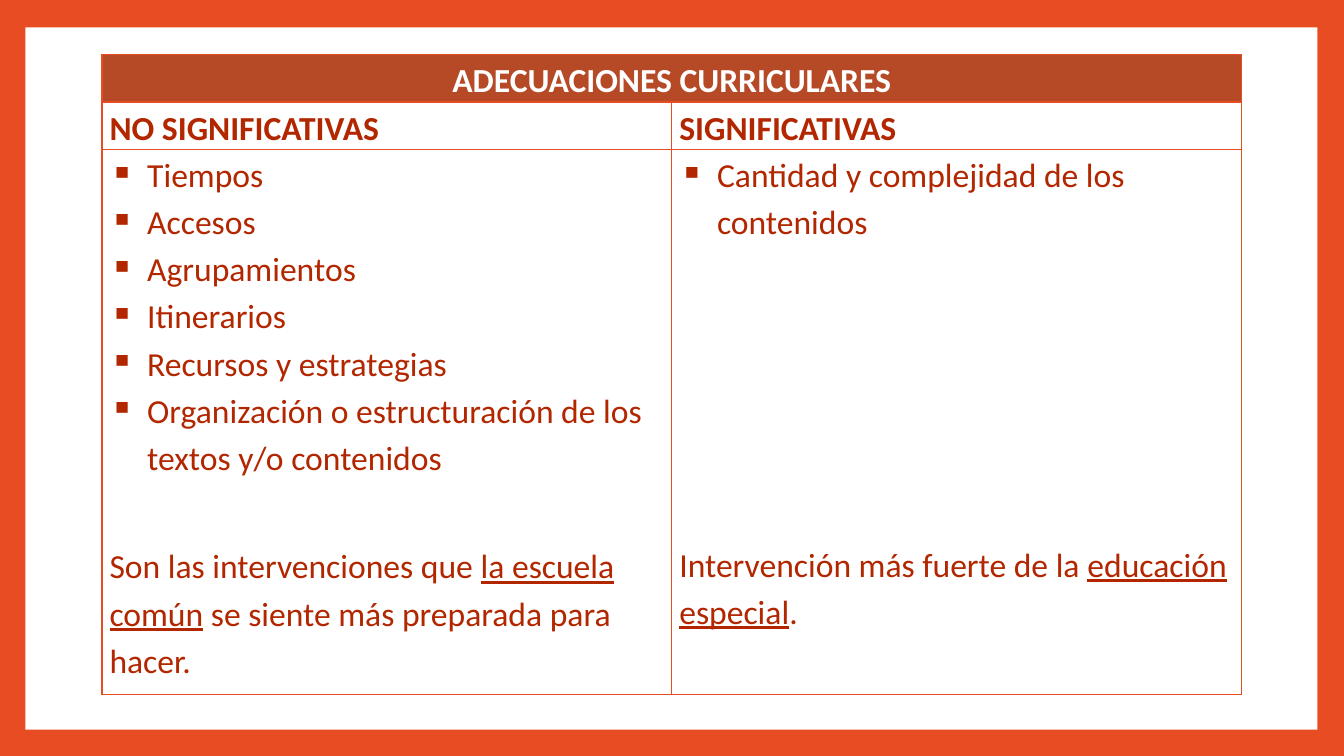
from lxml import etree
from pptx import Presentation
from pptx.dml.color import RGBColor
from pptx.enum.shapes import MSO_SHAPE
from pptx.enum.text import PP_ALIGN
from pptx.oxml.ns import qn
from pptx.util import Cm, Pt

RECTANGLE = MSO_SHAPE.RECTANGLE
CENTER, LEFT = PP_ALIGN.CENTER, PP_ALIGN.LEFT

# Content
TITLE = "ADECUACIONES CURRICULARES"
COLUMNS = [
    {
        "heading": "NO SIGNIFICATIVAS",
        "items": [
            "Tiempos",
            "Accesos",
            "Agrupamientos",
            "Itinerarios",
            "Recursos y estrategias",
            "Organización o estructuración de los textos y/o contenidos",
        ],
        "summary": ("Son las intervenciones que ", "la escuela común",
                    " se siente más preparada para hacer."),
        "summary_gap": 44,
    },
    {
        "heading": "SIGNIFICATIVAS",
        "items": ["Cantidad y complejidad de los contenidos"],
        "summary": ("Intervención más fuerte de la ", "educación especial", "."),
        "summary_gap": 211,
    },
]

# Style and layout
COLORS = {"orange": "E84C22", "header": "B64926", "text": "B22600", "white": "FFFFFF"}
FONT, FONT_SIZE = "Calibri", 24
ROW_HEIGHTS = [1.2, 1.2, 13.74]
COLUMN_WIDTH = 14.36
BULLET_INDENT = 0.95


def color(name):
    return RGBColor.from_string(COLORS[name])


def fill_solid(fill, name):
    fill.solid()
    fill.fore_color.rgb = color(name)


def write_paragraph(paragraph, parts, font_color="text", bold=False,
                    align=LEFT, bullet=False, space_before=0):
    """Write text parts; every second part is underlined."""
    paragraph.alignment = align
    paragraph.line_spacing = 1.15
    paragraph.space_before = Pt(space_before)
    paragraph.space_after = Pt(0)
    for index, text in enumerate(parts):
        run = paragraph.add_run()
        run.text = text
        font = run.font
        font.name, font.size, font.bold = FONT, Pt(FONT_SIZE), bold
        font.underline = index % 2 == 1
        font.color.rgb = color(font_color)
    if bullet:
        properties = paragraph._p.get_or_add_pPr()
        properties.set("marL", str(Cm(BULLET_INDENT)))
        properties.set("indent", str(-Cm(BULLET_INDENT)))
        etree.SubElement(properties, qn("a:buChar")).set("char", "▪")


def format_cell(cell, fill_name):
    cell.margin_left = cell.margin_right = Cm(0.19)
    cell.margin_top = cell.margin_bottom = 0
    fill_solid(cell.fill, fill_name)
    properties = cell._tc.get_or_add_tcPr()
    for index, side in enumerate(("a:lnL", "a:lnR", "a:lnT", "a:lnB")):
        line = etree.Element(qn(side), w=str(Pt(1)))
        solid = etree.SubElement(line, qn("a:solidFill"))
        etree.SubElement(solid, qn("a:srgbClr")).set("val", COLORS["orange"])
        properties.insert(index, line)


presentation = Presentation()
presentation.slide_width, presentation.slide_height = Cm(33.87), Cm(19.05)
slide = presentation.slides.add_slide(presentation.slide_layouts[6])

# Orange frame around a white panel
fill_solid(slide.background.fill, "orange")
panel = slide.shapes.add_shape(RECTANGLE, Cm(0.64), Cm(0.69), Cm(32.56), Cm(17.7))
panel.shadow.inherit = False
fill_solid(panel.fill, "white")
panel.line.fill.background()

# Table grid
table = slide.shapes.add_table(
    len(ROW_HEIGHTS), len(COLUMNS), Cm(2.57), Cm(1.37),
    Cm(COLUMN_WIDTH * len(COLUMNS)), Cm(sum(ROW_HEIGHTS))).table
table.first_row = table.horz_banding = False
for column in table.columns:
    column.width = Cm(COLUMN_WIDTH)
for row_index, height in enumerate(ROW_HEIGHTS):
    table.rows[row_index].height = Cm(height)
    for cell in table.rows[row_index].cells:
        format_cell(cell, "white" if row_index else "header")

# Title row across both columns
title_cell = table.cell(0, 0)
title_cell.merge(table.cell(0, len(COLUMNS) - 1))
write_paragraph(title_cell.text_frame.paragraphs[0], [TITLE],
                font_color="white", bold=True, align=CENTER)

# Headings, bullet lists and summaries
for column_index, content in enumerate(COLUMNS):
    heading_frame = table.cell(1, column_index).text_frame
    write_paragraph(heading_frame.paragraphs[0], [content["heading"]], bold=True)
    body_frame = table.cell(2, column_index).text_frame
    for item_index, item in enumerate(content["items"]):
        paragraph = body_frame.add_paragraph() if item_index else body_frame.paragraphs[0]
        write_paragraph(paragraph, [item], bullet=True)
    write_paragraph(body_frame.add_paragraph(), content["summary"],
                    space_before=content["summary_gap"])

presentation.save("out.pptx")
